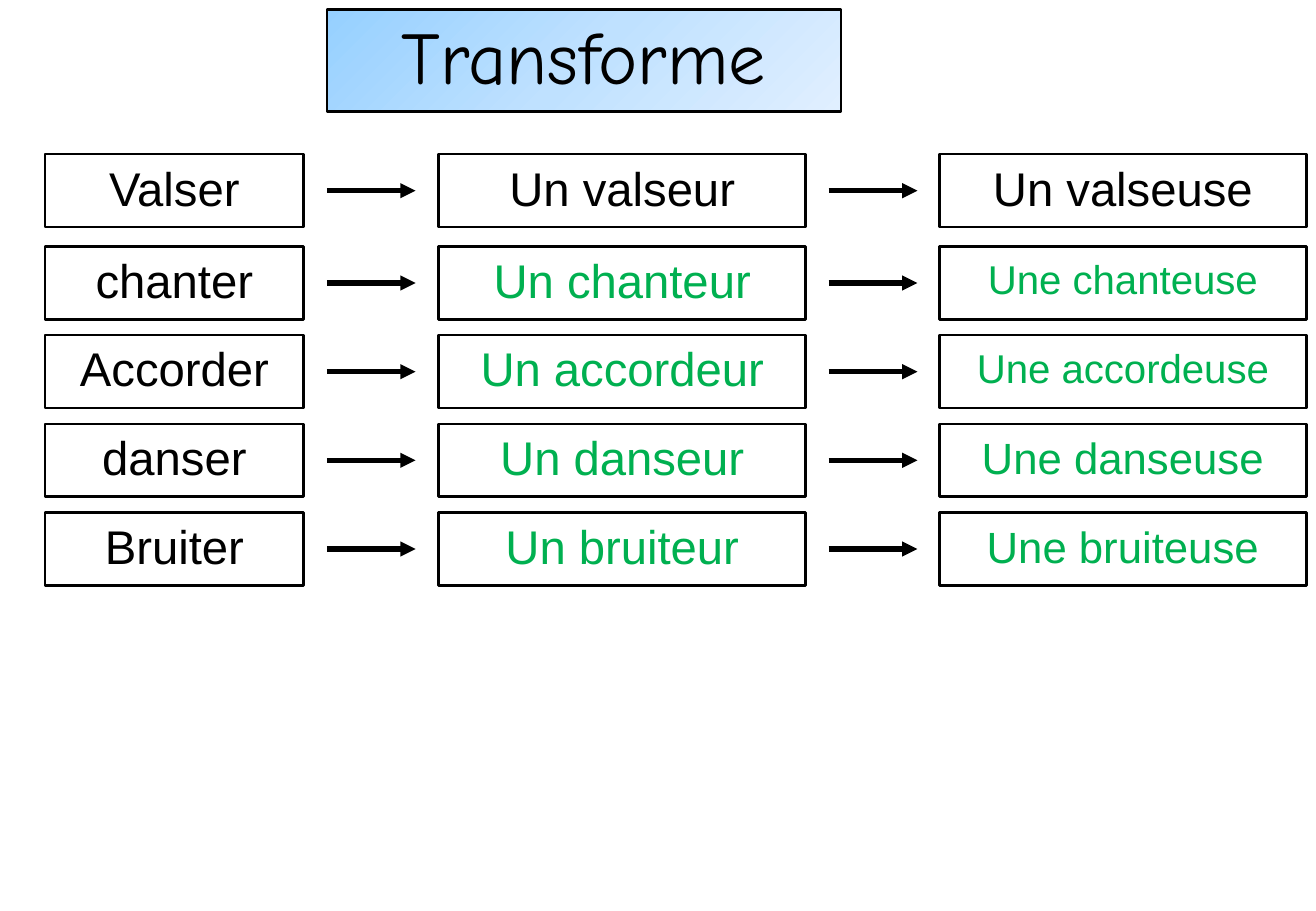
from copy import deepcopy

from pptx import Presentation
from pptx.dml.color import RGBColor
from pptx.enum.shapes import MSO_CONNECTOR, MSO_SHAPE
from pptx.enum.text import MSO_ANCHOR, PP_ALIGN
from pptx.oxml.ns import qn
from pptx.util import Pt
from lxml.etree import SubElement

PX = 9144  # 100 px to the inch
BLACK, GREEN = "000000", "00B050"
HIGH = 60
COLS = [(0, 213), (324, 302), (736, 302)]  # left and width in the grid
ARROWS = [232, 645]
REACH = 73
TOPS = [0] + [76 + 73 * i for i in range(4)]
# Words of a row, colour of the answers, size and line spacing of the last one
ROWS = [
    (["Valser", "Un valseur", "Un valseuse"], BLACK, 28, 0.9),
    (["chanter", "Un chanteur", "Une chanteuse"], GREEN, 23.8, 0.8),
    (["Accorder", "Un accordeur", "Une accordeuse"], GREEN, 23.8, 0.8),
    (["danser", "Un danseur", "Une danseuse"], GREEN, 25.9, 0.9),
    (["Bruiter", "Un bruiteur", "Une bruiteuse"], GREEN, 25.9, 0.9),
]


def rgb(code):
    return RGBColor.from_string(code)


def put(item, **vals):
    for name, val in vals.items():
        setattr(item, name, val)


def box(slide, x, y, w, h, text, size, color=BLACK, face="Arial", lead=0.9, gap=10):
    """Draw an outlined rectangle with centred text."""
    rect = slide.shapes.add_shape(MSO_SHAPE.RECTANGLE, *[v * PX for v in (x, y, w, h)])
    rect.shadow.inherit = False
    rect.fill.background()
    rect.line.color.rgb = rgb(BLACK)
    rect.line.width = Pt(1.5)
    put(rect.text_frame, word_wrap=True, vertical_anchor=MSO_ANCHOR.MIDDLE)
    para = rect.text_frame.paragraphs[0]
    put(para, alignment=PP_ALIGN.CENTER, line_spacing=lead, space_before=Pt(gap))
    run = para.add_run()
    run.text = text
    put(run.font, name=face, size=Pt(size))
    run.font.color.rgb = rgb(color)
    return rect


def arrow(slide, x, y, w):
    """Draw a level arrow that points right."""
    line = slide.shapes.add_connector(
        MSO_CONNECTOR.STRAIGHT, *[v * PX for v in (x, y, x + w, y)])
    line.line.color.rgb = rgb(BLACK)
    line.line.width = Pt(3)
    SubElement(line.line._get_or_add_ln(), qn("a:tailEnd"), type="triangle")
    SubElement(line._element.spPr, qn("a:effectLst"))


def title(slide, x, y, w, h):
    """Draw the heading on a slanted blue gradient."""
    head = box(slide, x, y, w, h, "Transforme", 44, face="Comic Neue", gap=0)
    head.fill.gradient()
    head.fill.gradient_angle = 315
    # Third stop between the two default ones
    first = next(head._element.spPr.iter(qn("a:gs")))
    first.addnext(deepcopy(first))
    tints = [(0, "96D0FF"), (0.5, "BFE1FF"), (1, "E0EFFF")]
    for stop, (at, code) in zip(head.fill.gradient_stops, tints):
        stop.position = at
        stop.color.rgb = rgb(code)


def grid(slide, x, y):
    """Draw the rows: verb, masculine noun, feminine noun."""
    for top, (words, color, size, lead) in zip(TOPS, ROWS):
        styles = [(28, BLACK, 0.9), (28, color, 0.9), (size, color, lead)]
        for (left, wide), word, (pts, ink, space) in zip(COLS, words, styles):
            box(slide, x + left, y + top, wide, HIGH, word, pts, ink, lead=space)
        for left in ARROWS:
            arrow(slide, x + left, y + top + HIGH // 2, REACH)


def main():
    deck = Presentation()
    put(deck, slide_width=1083 * PX, slide_height=750 * PX)
    slide = deck.slides.add_slide(deck.slide_layouts[6])
    title(slide, 269, 8, 423, 84)
    grid(slide, 37, 127)
    deck.save("out.pptx")


if __name__ == "__main__":
    main()
